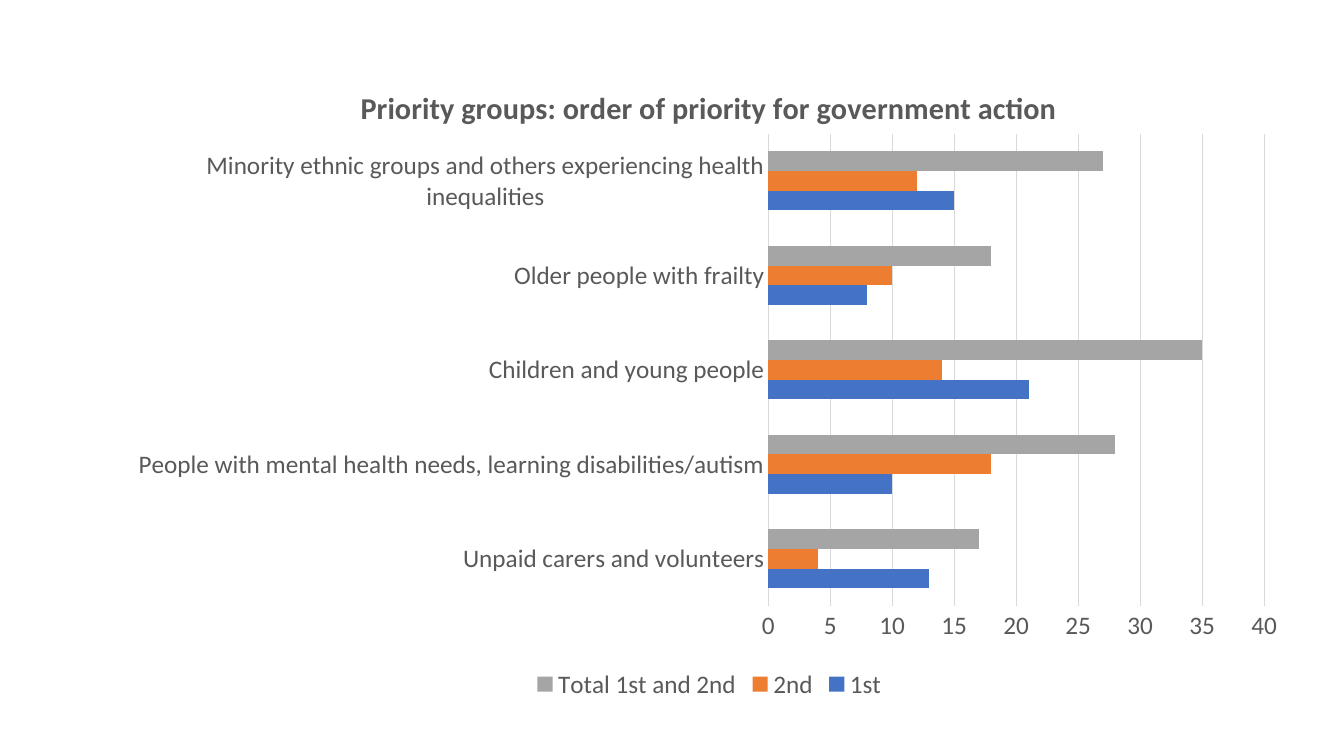
from dataclasses import dataclass

from lxml.etree import SubElement
from pptx import Presentation
from pptx.chart.data import CategoryChartData
from pptx.dml.color import RGBColor
from pptx.enum.chart import XL_CHART_TYPE, XL_LEGEND_POSITION, XL_TICK_MARK
from pptx.oxml.ns import qn
from pptx.util import Inches, Pt


@dataclass(frozen=True)
class Theme:
    """Colours and type sizes of the slide."""
    font: str = "Calibri"
    ink: str = "595959"
    rule: str = "D9D9D9"
    series: tuple = ("4472C4", "ED7D31", "A5A5A5")
    title_size: float = 21.6
    label_size: float = 18
    rule_width: float = 0.75


THEME = Theme()
HEADING = "Priority groups: order of priority for government action"
RANKS = ("1st", "2nd", "Total 1st and 2nd")
GROUPS = {
    "Unpaid carers and volunteers": (13, 4, 17),
    "People with mental health needs, learning disabilities/autism": (10, 18, 28),
    "Children and young people": (21, 14, 35),
    "Older people with frailty": (8, 10, 18),
    "Minority ethnic groups and others experiencing health inequalities": (15, 12, 27),
}


def style_font(font, size, bold=False):
    """Apply the theme's face and ink to a font."""
    font.name = THEME.font
    font.size = Pt(size)
    font.bold = bold
    font.color.rgb = RGBColor.from_string(THEME.ink)


def style_rule(line):
    """Draw a line as a thin light rule."""
    line.width = Pt(THEME.rule_width)
    line.color.rgb = RGBColor.from_string(THEME.rule)


def place(part, position, **settings):
    """Fix a chart part's place, its layout being the child at position."""
    layout = part.find(qn("c:layout"))
    if layout is not None:
        part.remove(layout)
    layout = SubElement(part, qn("c:layout"))
    part.insert(position, layout)
    manual = SubElement(layout, qn("c:manualLayout"))
    for tag, value in settings.items():
        SubElement(manual, qn(f"c:{tag}")).set("val", str(value))


def add_priority_chart(slide, left, top, width, height):
    """Add the clustered bars of priorities by group."""
    priorities = CategoryChartData()
    priorities.categories = list(GROUPS)
    for rank, votes in zip(RANKS, zip(*GROUPS.values())):
        priorities.add_series(rank, votes)
    chart = slide.shapes.add_chart(
        XL_CHART_TYPE.BAR_CLUSTERED, left, top, width, height, priorities).chart
    style_font(chart.font, THEME.label_size)
    bars = chart.plots[0]
    bars.gap_width = 182
    bars.vary_by_categories = False
    for rank, colour in zip(bars.series, THEME.series):
        rank.format.fill.solid()
        rank.format.fill.fore_color.rgb = RGBColor.from_string(colour)
        rank.invert_if_negative = False
    return chart


def add_heading(chart):
    """Write the chart's heading and set its place."""
    chart.has_title = True
    heading = chart.chart_title
    run = heading.text_frame.paragraphs[0].add_run()
    run.text = HEADING
    style_font(run.font, THEME.title_size, bold=True)
    place(heading._element, 1, xMode="edge", yMode="edge", x=0.2, y=0.05)


def format_axes(chart):
    """Style both axes and the gridlines, and set the plot's place."""
    for axis in (chart.category_axis, chart.value_axis):
        axis.major_tick_mark = XL_TICK_MARK.NONE
        axis.minor_tick_mark = XL_TICK_MARK.NONE
        style_font(axis.tick_labels.font, THEME.label_size)
    style_rule(chart.category_axis.format.line)
    votes = chart.value_axis
    votes.minimum_scale, votes.maximum_scale, votes.major_unit = 0, 40, 5
    votes.format.line.fill.background()
    votes.has_major_gridlines = True
    style_rule(votes.major_gridlines.format.line)
    place(chart._chartSpace.chart.plotArea, 0, layoutTarget="inner",
          xMode="edge", yMode="edge", x=0.55, y=0.13, w=0.42, h=0.72)


def add_legend(chart):
    """Put the legend under the plot."""
    chart.has_legend = True
    chart.legend.position = XL_LEGEND_POSITION.BOTTOM
    chart.legend.include_in_layout = False
    style_font(chart.legend.font, THEME.label_size)


def main():
    """Build and save the slide."""
    deck = Presentation()
    deck.slide_width, deck.slide_height = Inches(13.33), Inches(7.5)
    slide = deck.slides.add_slide(deck.slide_layouts[6])
    chart = add_priority_chart(
        slide, Inches(1.18), Inches(0.48), Inches(11.71), Inches(6.51))
    add_heading(chart)
    format_axes(chart)
    add_legend(chart)
    deck.save("out.pptx")


if __name__ == "__main__":
    main()
